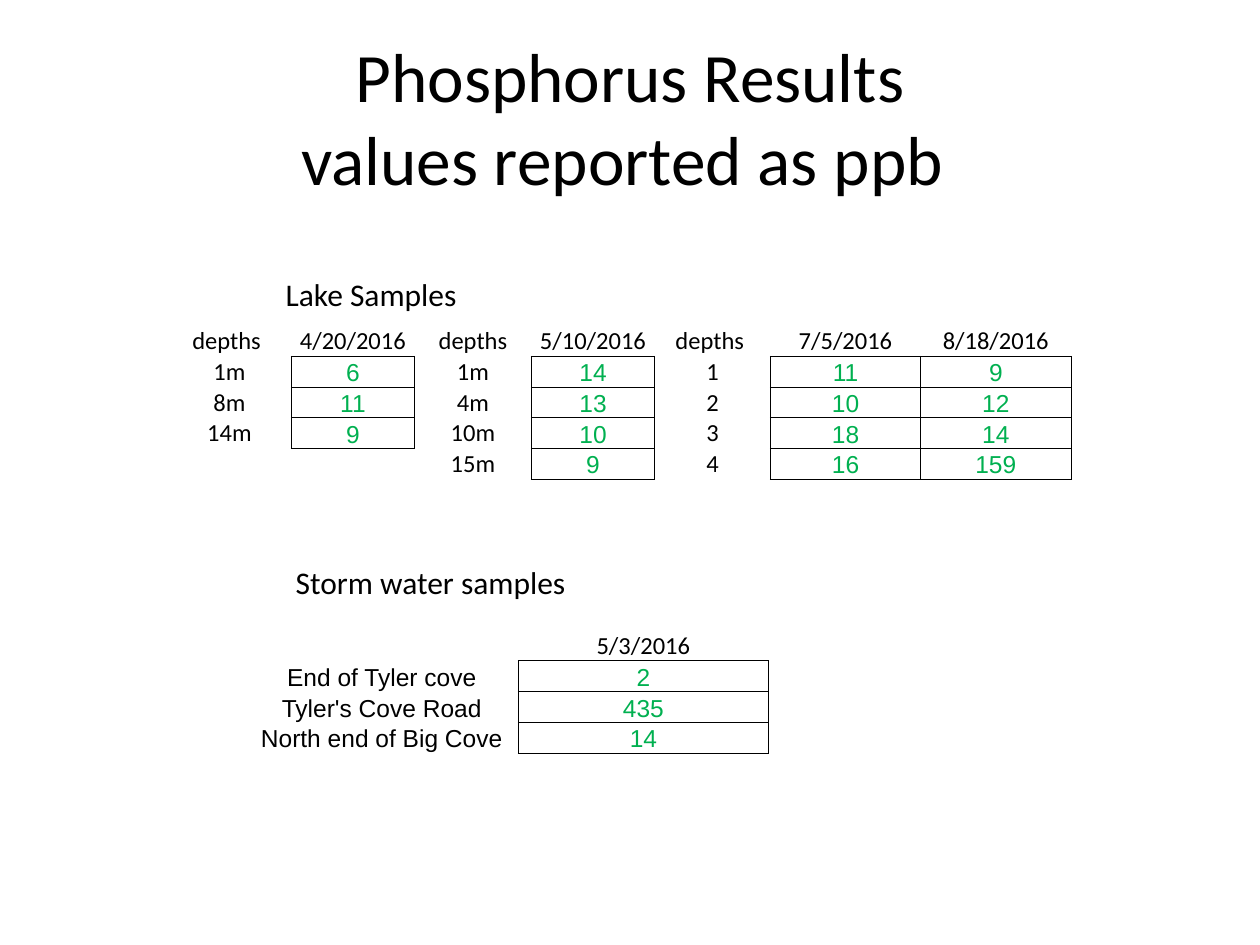
"""Build a slide of phosphorus results with two bordered sample tables."""
from dataclasses import dataclass

from lxml.etree import SubElement as Sub
from pptx import Presentation
from pptx.dml.color import RGBColor as Rgb
from pptx.enum.text import MSO_ANCHOR as Anchor, PP_ALIGN as Align
from pptx.oxml.ns import qn
from pptx.util import Cm, Pt


@dataclass(frozen=True)
class Theme:
    ink: str = "000000"
    green: str = "00B050"
    body: str = "Calibri"
    plain: str = "Arial"
    title: float = 39.6
    label: float = 18
    cell: float = 14
    rule: float = 0.5
    grid: str = "{2D5ABB26-0587-4C30-8999-92F81FD0307C}"


THEME = Theme()
ROW = 0.62
SIDES = {"a:lnL": (0, -1), "a:lnR": (0, 1), "a:lnT": (-1, 0), "a:lnB": (1, 0)}

LAKE = [
    ["depths ", "4/20/2016", "depths", "5/10/2016", "depths ", "7/5/2016", "8/18/2016"],
    ["1m", "6", "1m", "14", "1", "11", "9"],
    ["8m", "11", "4m", "13", "2", "10", "12"],
    ["14m", "9", "10m", "10", "3", "18", "14"],
    ["", "", "15m", "9", "4", "16", "159"],
]
STORM = [
    ["", "5/3/2016"],
    ["End of Tyler cove ", "2"],
    ["Tyler's Cove Road ", "435"],
    ["North end of Big Cove ", "14"],
]


def style(frame, size, font, color, align):
    for para in frame.paragraphs:
        para.alignment = align
        for run in para.runs:
            run.font.size = Pt(size)
            run.font.name = font
            run.font.color.rgb = Rgb.from_string(color)


def add_text(slide, text, box, size, align=Align.LEFT, wrap=False):
    frame = slide.shapes.add_textbox(*map(Cm, box)).text_frame
    frame.text = text
    frame.word_wrap = wrap
    frame.vertical_anchor = Anchor.MIDDLE if wrap else Anchor.TOP
    style(frame, size, THEME.body, THEME.ink, align)


def add_edge(cell, side):
    line = Sub(cell._tc.get_or_add_tcPr(), qn(side), w=str(Pt(THEME.rule)))
    fill = Sub(line, qn("a:solidFill"))
    Sub(fill, qn("a:srgbClr"), val=THEME.ink)


def fill_cell(cell, text, font, color):
    cell.margin_left = cell.margin_right = cell.margin_top = Cm(0.02)
    cell.margin_bottom = 0
    cell.vertical_anchor = Anchor.BOTTOM
    frame = cell.text_frame
    frame.text = text
    style(frame, THEME.cell, font, color, Align.CENTER)
    if not text:
        Sub(frame.paragraphs[0]._p, qn("a:endParaRPr"), sz=str(THEME.cell * 100))


def add_grid(slide, rows, left, top, widths, values, names):
    shape = slide.shapes.add_table(
        len(rows), len(widths), Cm(left), Cm(top), Cm(sum(widths)), Cm(ROW * len(rows)))
    table = shape.table
    table.first_row = table.horz_banding = False
    table._tbl.tblPr.find(qn("a:tableStyleId")).text = THEME.grid
    for col, width in zip(table.columns, widths):
        col.width = Cm(width)
    boxed = {(r, c) for r, row in enumerate(rows) for c, text in enumerate(row)
             if r and c in values and text}
    for r, row in enumerate(rows):
        table.rows[r].height = Cm(ROW)
        for c, text in enumerate(row):
            cell = table.cell(r, c)
            value = (r, c) in boxed
            font = THEME.plain if value else names if r else THEME.body
            fill_cell(cell, text, font, THEME.green if value else THEME.ink)
            for side, (down, over) in SIDES.items():
                if value or (r + down, c + over) in boxed:
                    add_edge(cell, side)
            cell.fill.background()


def main():
    deck = Presentation()
    deck.slide_width, deck.slide_height = Cm(25.4), Cm(19.05)
    slide = deck.slides.add_slide(deck.slide_layouts[6])
    add_text(slide, "Phosphorus Results\vvalues reported as ppb ",
             (1.27, 0.76, 22.86, 3.18), THEME.title, Align.CENTER, True)
    add_text(slide, "Storm water samples", (5.71, 11.23, 6.02, 1.02), THEME.label)
    add_text(slide, "Lake Samples", (5.51, 5.41, 3.99, 1.02), THEME.label)
    add_grid(slide, LAKE, 3.38, 6.56, [2.49, 2.49, 2.35, 2.49, 2.33, 3.03, 3.03],
             {1, 3, 5, 6}, THEME.body)
    add_grid(slide, STORM, 5.08, 12.7, [5.37, 5.04], {1}, THEME.plain)
    deck.save("out.pptx")


if __name__ == "__main__":
    main()
